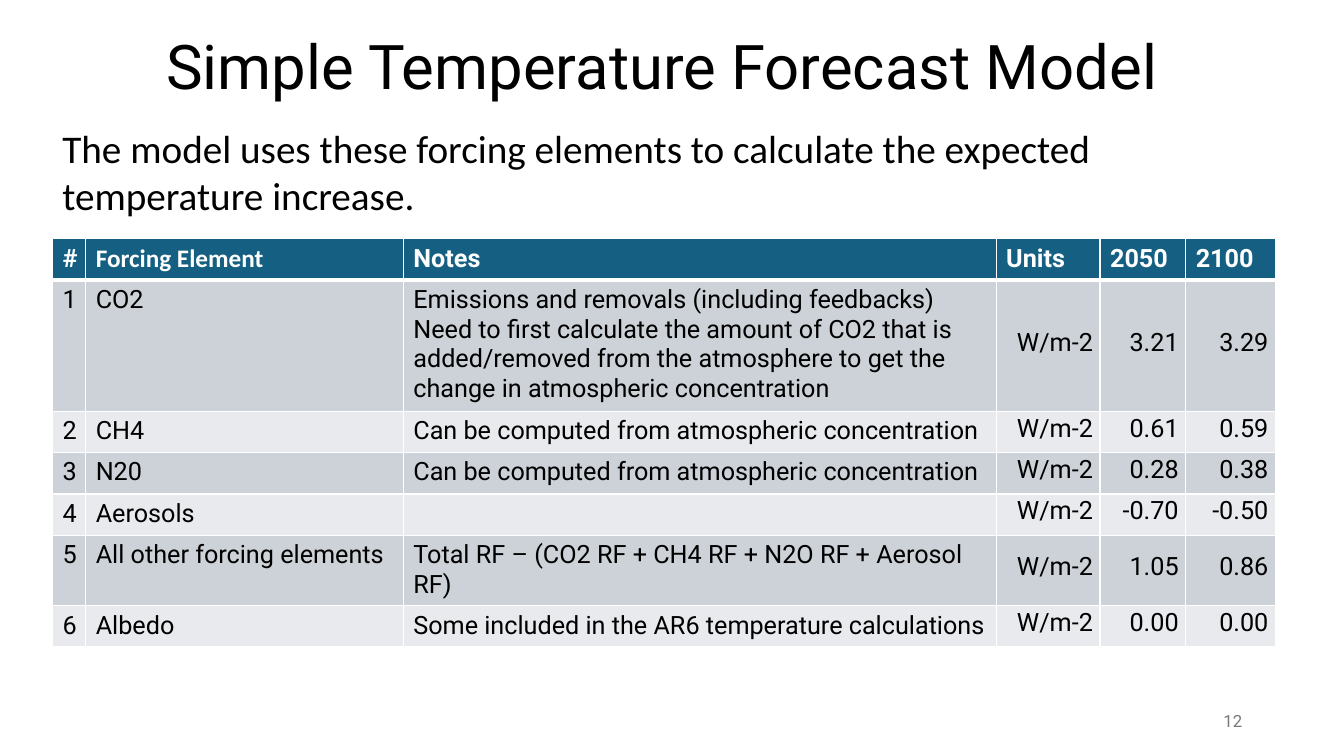
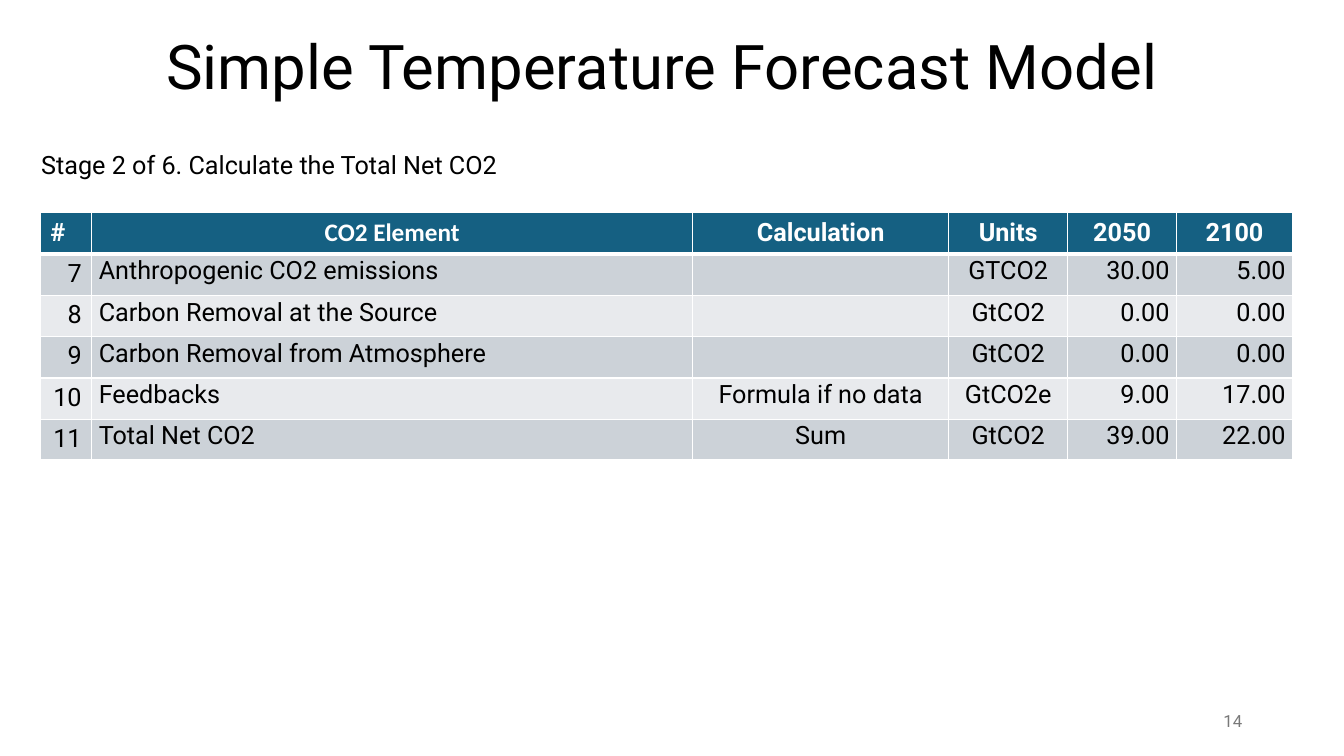
"""Build two slides that tabulate a simple temperature forecast model."""
from dataclasses import dataclass
from typing import Any, NamedTuple

from lxml.etree import SubElement as Sub
from pptx import Presentation
from pptx.dml.color import RGBColor as Rgb
from pptx.enum.text import MSO_ANCHOR as Anchor, MSO_AUTO_SIZE as Fit, PP_ALIGN as Align
from pptx.oxml.ns import qn
from pptx.slide import Slide
from pptx.table import _Cell as Cell
from pptx.text.text import TextFrame as Frame
from pptx.util import Inches, Pt


@dataclass(frozen=True)
class Theme:
    """Colours, fonts and type sizes."""
    ink: str = "000000"
    paper: str = "FFFFFF"
    head: str = "156082"
    bands: tuple[str, str] = ("CCD2D8", "E8EAED")
    grey: str = "797979"
    main: str = "Roboto"
    side: str = "Calibri"
    big: int = 44
    lead: int = 28
    base: int = 18
    small: int = 12
    thin: int = 1
    thick: int = 3


class Box(NamedTuple):
    """Place and size in inches."""
    left: float
    top: float
    width: float
    height: float


class Style(NamedTuple):
    """Look of one piece of text."""
    size: int
    font: str
    ink: str
    bold: bool = False


class Col(NamedTuple):
    """One table column."""
    name: str
    width: float
    align: Align = Align.LEFT
    snug: bool = True
    top: Align = Align.CENTER
    font: str = "Roboto"


class Page(NamedTuple):
    """Content of one slide."""
    num: str
    lead: str
    spot: Box
    style: Style
    left: float
    top: float
    cols: list[Col]
    high: list[float]
    rows: list[list[str]]


THEME = Theme()
TITLE = "Simple Temperature Forecast Model"
BODY = Style(THEME.base, THEME.main, THEME.ink)
SNUG = {"vertical_anchor": Anchor.MIDDLE, "margin_left": Inches(0.07),
        "margin_right": Inches(0.07), "margin_top": 0, "margin_bottom": 0}
TIGHT = {"line_spacing": Pt(16.5), "space_after": Pt(10)}
LEFT, MID, RIGHT = Align.LEFT, Align.CENTER, Align.RIGHT
UNIT = "W/m-2"
FROM_AIR = "Can be computed from atmospheric concentration"

PAGES = [
    Page(
        "12",
        "The model uses these forcing elements to calculate the expected temperature increase.",
        Box(0.52, 1.18, 12.12, 1.04), Style(THEME.lead, THEME.side, THEME.ink), 0.52, 2.37,
        [Col("#", 0.33, LEFT, False, LEFT),
         Col("Forcing Element", 3.15, LEFT, False, LEFT, THEME.side),
         Col("Notes", 5.88, LEFT, False, LEFT),
         Col("Units", 1.03, RIGHT, True, LEFT),
         Col("2050", 0.85, RIGHT, True, LEFT),
         Col("2100", 0.89, RIGHT, True, LEFT)],
        [0.41, 1.27, 0.41, 0.41, 0.41, 0.69, 0.39],
        [["1", "CO2", "Emissions and removals (including feedbacks)\n"
          "Need to first calculate the amount of CO2 that is added/removed from the "
          "atmosphere to get the change in atmospheric concentration", UNIT, "3.21", "3.29"],
         ["2", "CH4", FROM_AIR, UNIT, "0.61", "0.59"],
         ["3", "N20", FROM_AIR, UNIT, "0.28", "0.38"],
         ["4", "Aerosols", "", UNIT, "-0.70", "-0.50"],
         ["5", "All other forcing elements",
          "Total RF – (CO2 RF + CH4 RF + N2O RF + Aerosol RF)", UNIT, "1.05", "0.86"],
         ["6", "Albedo", "Some included in the AR6 temperature calculations",
          UNIT, "0.00", "0.00"]]),
    Page(
        "14", "Stage 2 of 6. Calculate the Total Net CO2",
        Box(0.31, 1.43, 5.32, 0.4), BODY, 0.4, 2.11,
        [Col("#", 0.51, RIGHT, False, LEFT),
         Col("CO2 Element", 5.96, font=THEME.side),
         Col("Calculation", 2.54, MID),
         Col("Units", 1.18, MID),
         Col("2050", 1.08, RIGHT),
         Col("2100", 1.15, RIGHT)],
        [0.41] * 5 + [0.39],
        [["7", "Anthropogenic CO2 emissions", "", "GTCO2", "30.00", "5.00"],
         ["8", "Carbon Removal at the Source", "", "GtCO2", "0.00", "0.00"],
         ["9", "Carbon Removal from Atmosphere", "", "GtCO2", "0.00", "0.00"],
         ["10", "Feedbacks", "Formula if no data", "GtCO2e", "9.00", "17.00"],
         ["11", "Total Net CO2", "Sum", "GtCO2", "39.00", "22.00"]]),
]


def put(item: Any, vals: dict[str, Any]) -> None:
    """Set each named value on the item."""
    for name, val in vals.items():
        setattr(item, name, val)


def write(frame: Frame, text: str, style: Style, form: dict[str, Any]) -> None:
    """Fill a frame with text, one paragraph per line."""
    frame.text = text
    for para in frame.paragraphs:
        put(para, form)
        put(para.font, {"size": Pt(style.size), "name": style.font, "bold": style.bold})
        for run in para.runs:
            put(run.font, {"size": Pt(style.size), "name": style.font, "bold": style.bold})
            run.font.color.rgb = Rgb.from_string(style.ink)


def label(slide: Slide, box: Box, text: str, style: Style,
          form: dict[str, Any], look: dict[str, Any]) -> None:
    """Add a wrapped text box."""
    frame = slide.shapes.add_textbox(*map(Inches, box)).text_frame
    put(frame, {"word_wrap": True, **look})
    write(frame, text, style, form)


def edge(cell: Cell, row: int) -> None:
    """Draw the cell borders, thick below the head row."""
    wide = {"L": THEME.thin, "R": THEME.thin,
            "T": THEME.thick if row == 1 else THEME.thin,
            "B": THEME.thick if row == 0 else THEME.thin}
    props = cell._tc.get_or_add_tcPr()
    for side, width in wide.items():
        line = Sub(props, qn(f"a:ln{side}"), w=str(Pt(width)))
        Sub(Sub(line, qn("a:solidFill")), qn("a:srgbClr"), val=THEME.paper)


def paint(cell: Cell, row: int, col: Col, text: str) -> None:
    """Format and fill one table cell."""
    edge(cell, row)
    cell.fill.solid()
    tint = THEME.bands[(row - 1) % 2] if row else THEME.head
    cell.fill.fore_color.rgb = Rgb.from_string(tint)
    if row == 0:
        write(cell.text_frame, text, Style(THEME.base, col.font, THEME.paper, True),
              {"alignment": col.top})
        return
    snug = col.snug and bool(text)
    put(cell, SNUG if snug else {})
    write(cell.text_frame, text, BODY, {"alignment": col.align, **(TIGHT if snug else {})})


def grid(slide: Slide, page: Page) -> None:
    """Add the table of a page."""
    box = Box(page.left, page.top, sum(col.width for col in page.cols), sum(page.high))
    table = slide.shapes.add_table(
        len(page.high), len(page.cols), *map(Inches, box)).table
    table.horz_banding = False
    for slot, col in zip(table.columns, page.cols):
        slot.width = Inches(col.width)
    for slot, high in zip(table.rows, page.high):
        slot.height = Inches(high)
    for row, texts in enumerate([[col.name for col in page.cols], *page.rows]):
        for at, (col, text) in enumerate(zip(page.cols, texts)):
            paint(table.cell(row, at), row, col, text)


def draw(slide: Slide, page: Page) -> None:
    """Draw one page with its title, table, lead and number."""
    mid = {"vertical_anchor": Anchor.MIDDLE}
    label(slide, Box(0.82, -0.04, 11.5, 1.45), TITLE,
          Style(THEME.big, THEME.main, THEME.ink),
          {"alignment": MID, "line_spacing": 0.9}, mid)
    grid(slide, page)
    label(slide, page.spot, page.lead, page.style, {}, {"auto_size": Fit.SHAPE_TO_FIT_TEXT})
    label(slide, Box(9.42, 6.95, 3, 0.4), page.num,
          Style(THEME.small, THEME.main, THEME.grey), {"alignment": RIGHT}, mid)


def main() -> None:
    """Build and save the deck."""
    deck = Presentation()
    put(deck, {"slide_width": Inches(13.33), "slide_height": Inches(7.5)})
    for page in PAGES:
        draw(deck.slides.add_slide(deck.slide_layouts[6]), page)
    deck.save("out.pptx")


if __name__ == "__main__":
    main()
